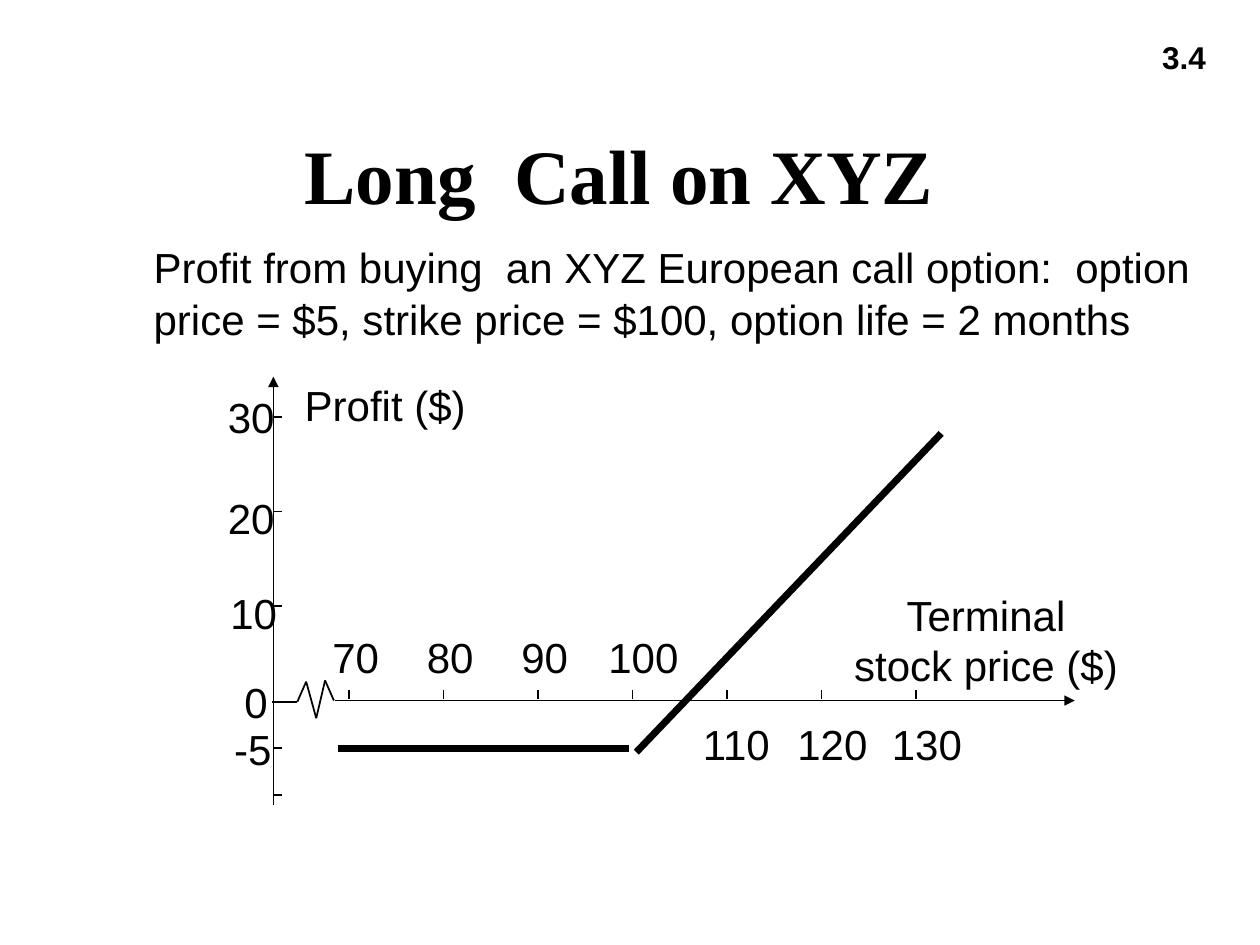
"""Build the long call profit slide."""
from lxml.etree import SubElement
from pptx import Presentation
from pptx.dml.color import RGBColor
from pptx.enum.shapes import MSO_CONNECTOR
from pptx.enum.text import MSO_ANCHOR, MSO_AUTO_SIZE, PP_ALIGN
from pptx.oxml.ns import qn
from pptx.util import Inches, Pt

THEME = {
    "ink": RGBColor(0, 0, 0),
    "sans": "Arial",
    "serif": "Times New Roman",
    "title": 44,
    "body": 24,
    "page": 18,
    "thin": 1,
    "thick": 4,
}

PAGE = "3.4"
TITLE = "Long  Call on XYZ"
BODY = ("Profit from buying  an XYZ European call option:  option "
        "price = $5, strike price = $100, option life = 2 months")
NAMES = [
    ("Profit ($)", (2.32, 2.96, 1.48, 0.5), PP_ALIGN.LEFT),
    ("Terminal\nstock price ($)", (6.68, 4.63, 2.29, 0.9), PP_ALIGN.CENTER),
]
PROFITS = [
    ("30", (1.71, 3.06, 0.57, 0.5)),
    ("20", (1.71, 3.86, 0.57, 0.5)),
    ("10", (1.73, 4.61, 0.57, 0.5)),
    ("0", (1.84, 5.32, 0.39, 0.5)),
    ("-5", (1.76, 5.69, 0.55, 0.5)),
]
MARKS = [30, 20, 10, -5, -10]
PRICES = range(70, 131, 10)
STRIKE = 100
AXES = [((2.17, 6.39), (2.17, 2.99)), ((2.66, 5.56), (8.53, 5.56))]
BREAK = [(2.16, 5.57), (2.36, 5.57), (2.43, 5.41),
         (2.51, 5.7), (2.58, 5.4), (2.65, 5.56)]
PAYOFF = [((2.68, 5.94), (4.99, 5.94)), ((5.05, 5.97), (7.47, 3.44))]
LEFT, ZERO, FIRST, UNIT = 2.17, 5.56, 2.77, 0.075


def style(part, **looks):
    for name, value in looks.items():
        setattr(part, name, value)


def write(shapes, text, box, align=PP_ALIGN.LEFT, size="body",
          face="sans", bold=False, lead=1.0, **frame):
    area = shapes.add_textbox(*map(Inches, box)).text_frame
    area.text = text
    style(area, **frame)
    for para in area.paragraphs:
        style(para, alignment=align, line_spacing=lead)
        style(para.font, name=THEME[face], size=Pt(THEME[size]), bold=bold)
        para.font.color.rgb = THEME["ink"]


def label(shapes, text, box, align=PP_ALIGN.LEFT):
    write(shapes, text, box, align, word_wrap=False,
          auto_size=MSO_AUTO_SIZE.SHAPE_TO_FIT_TEXT)


def rule(shapes, start, end, weight="thin", arrow=False):
    link = shapes.add_connector(
        MSO_CONNECTOR.STRAIGHT, *map(Inches, start + end))
    link.line.width = Pt(THEME[weight])
    link.line.color.rgb = THEME["ink"]
    if arrow:
        SubElement(link.line._get_or_add_ln(), qn("a:tailEnd"), type="triangle")
    SubElement(link._element.spPr, qn("a:effectLst"))


def graph(shapes):
    for start, end in AXES:
        rule(shapes, start, end, arrow=True)
    for start, end in zip(BREAK, BREAK[1:]):
        rule(shapes, start, end)
    for mark in MARKS:
        y = ZERO - UNIT * mark
        rule(shapes, (LEFT, y), (LEFT + 0.07, y))
    for price in PRICES:
        x = FIRST + UNIT * (price - PRICES[0])
        rule(shapes, (x, ZERO - 0.08), (x, ZERO - 0.01))
        shift, width = (0.23, 0.57) if price < STRIKE else (0.29, 0.76)
        top = 4.96 if price <= STRIKE else 5.65
        label(shapes, str(price), (x - shift, top, width, 0.5))
    for start, end in PAYOFF:
        rule(shapes, start, end, "thick")
    for text, box in PROFITS:
        label(shapes, text, box)
    for text, box, align in NAMES:
        label(shapes, text, box, align)


def main():
    deck = Presentation()
    style(deck, slide_width=Inches(10), slide_height=Inches(7.5))
    shapes = deck.slides.add_slide(deck.slide_layouts[6]).shapes
    write(shapes, PAGE, (7.5, 0.25, 2.17, 0.5), PP_ALIGN.RIGHT, "page",
          bold=True, word_wrap=True)
    write(shapes, TITLE, (0.5, 0.75, 8.83, 1.25), PP_ALIGN.CENTER, "title",
          "serif", True, word_wrap=True, vertical_anchor=MSO_ANCHOR.MIDDLE)
    write(shapes, BODY, (0.75, 1.75, 8.94, 4.5), lead=1.04, word_wrap=True,
          margin_left=Inches(0.47), margin_top=Inches(0.15))
    graph(shapes.add_group_shape().shapes)
    deck.save("out.pptx")


if __name__ == "__main__":
    main()
